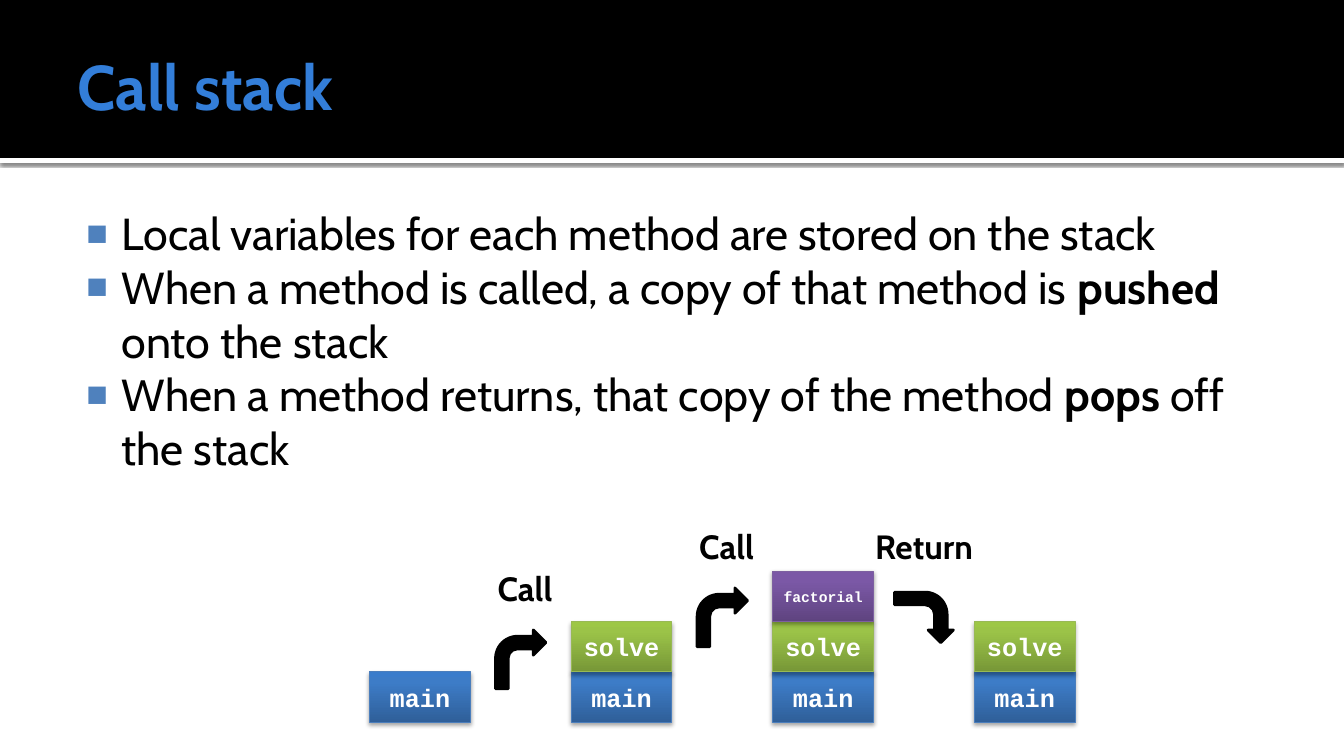
from dataclasses import dataclass

from lxml.etree import SubElement as Sub
from pptx import Presentation
from pptx.dml.color import RGBColor as Rgb
from pptx.enum.shapes import MSO_SHAPE as Shape
from pptx.enum.text import MSO_ANCHOR as Anchor, MSO_AUTO_SIZE as AutoSize, PP_ALIGN as Align
from pptx.oxml.ns import qn
from pptx.util import Inches, Pt


@dataclass(frozen=True)
class Theme:
    black: str = "000000"
    white: str = "FFFFFF"
    title: str = "337ED9"
    bullet: str = "4F81BD"
    text_font: str = "Cabin"
    code_font: str = "Courier New"
    title_size: float = 45
    body_size: float = 32
    label_size: float = 24
    code_size: float = 18
    small_code_size: float = 10.5


THEME = Theme()
UNIT = Inches(1 / 12)  # grid of 160 columns by 90 rows
COLUMNS, ROWS = 160, 90
HEADER_ROWS = 18.8
BLOCK_WIDTH, BLOCK_HEIGHT = 12, 6
ARROW_WIDTH, ARROW_HEIGHT = 6, 7
FIRST_STACK, STACK_STEP, STACK_FOOT = 44, 24, 86

# method: gradient from bottom to top, outline, type size
METHODS = {
    "main": (("2F5F99", "3D7CC7", "3A7CCB"), "4B7EBC", THEME.code_size),
    "solve": (("779737", "9BC348", "9DC746"), "98B955", THEME.code_size),
    "factorial": (("5F4480", "7B58A6", "7C57A8"), "7D60A0", THEME.small_code_size),
}
GRADIENT_STOPS = (0, 80, 100)

# methods on the stack, then label, label width, label offset, arrow row, rotation
STEPS = [
    (["main"], None),
    (["main", "solve"], ("Call", 13, -12, 75, 0)),
    (["main", "solve", "factorial"], ("Call", 13, -12, 70, 0)),
    (["main", "solve"], ("Return", 16, -14, 70, 90)),
]

BULLETS = [
    [("Local variables for each method are stored on the stack", False)],
    [("When a method is called, a copy of that method is ", False),
     ("pushed", True), (" onto the stack", False)],
    [("When a method returns, that copy of the method ", False),
     ("pops", True), (" off the stack", False)],
]


def write(paragraph, text, color, **formats):
    run = paragraph.add_run()
    run.text = text
    run.font.color.rgb = Rgb.from_string(color)
    for name, value in formats.items():
        setattr(run.font, name, value)


def cast_shadow(shape, opacity, blur, distance):
    """Give the shape a black shadow straight below it; lengths in points."""
    shape.shadow.inherit = False
    effects = shape.element.spPr.find(qn("a:effectLst"))
    shadow = Sub(effects, qn("a:outerShdw"), blurRad=str(Pt(blur)), dist=str(Pt(distance)),
                 dir="5400000", algn="ctr", rotWithShape="0")
    tint = Sub(shadow, qn("a:srgbClr"), val=THEME.black)
    Sub(tint, qn("a:alpha"), val=str(opacity * 1000))


deck = Presentation()
deck.slide_width, deck.slide_height = COLUMNS * UNIT, ROWS * UNIT
slide = deck.slides.add_slide(deck.slide_layouts[1])
title, body = slide.placeholders

# Header bands, behind the title
rule = slide.shapes.add_shape(Shape.RECTANGLE, 0, int(HEADER_ROWS * UNIT),
                              COLUMNS * UNIT, Inches(0.05))
header = slide.shapes.add_shape(Shape.RECTANGLE, 0, 0, COLUMNS * UNIT, int(HEADER_ROWS * UNIT))
for band, color in ((rule, THEME.white), (header, THEME.black)):
    band.fill.solid()
    band.fill.fore_color.rgb = Rgb.from_string(color)
    band.line.fill.background()
    band.shadow.inherit = False
    title.element.addprevious(band.element)
cast_shadow(rule, 60, 2.5, 0.8)

# Title and bullet list
for holder, top, height, anchor, margins in (
        (title, 2, 16.4, Anchor.MIDDLE, (0.1, 0.05, 0.05, 0.05)),
        (body, 23.3, 60.7, Anchor.TOP, (0.06, 0.1, 0.1, 0.05))):
    holder.left, holder.width = 8 * UNIT, (COLUMNS - 16) * UNIT
    holder.top, holder.height = int(top * UNIT), int(height * UNIT)
    frame = holder.text_frame
    frame.auto_size, frame.word_wrap, frame.vertical_anchor = AutoSize.NONE, True, anchor
    for side, margin in zip(("left", "top", "right", "bottom"), margins):
        setattr(frame, f"margin_{side}", Inches(margin))

heading = title.text_frame.paragraphs[0]
heading.alignment = Align.LEFT
write(heading, "Call stack", THEME.title, name=THEME.text_font,
      size=Pt(THEME.title_size), bold=True)

for number, pieces in enumerate(BULLETS):
    point = body.text_frame.add_paragraph() if number else body.text_frame.paragraphs[0]
    point.space_before = Pt(0)
    layout = point._p.get_or_add_pPr()
    layout.set("marL", str(Inches(0.48)))
    layout.set("indent", str(Inches(-0.35)))
    Sub(Sub(layout, qn("a:buClr")), qn("a:srgbClr"), val=THEME.bullet)
    Sub(layout, qn("a:buSzPct"), val="80000")
    Sub(layout, qn("a:buChar"), char="■")
    for text, bold in pieces:
        write(point, text, THEME.black, name=THEME.text_font,
              size=Pt(THEME.body_size), bold=bold)

# The stack after each call or return
for step, (methods, move) in enumerate(STEPS):
    column = FIRST_STACK + step * STACK_STEP
    shapes = slide.shapes.add_group_shape().shapes if move else slide.shapes
    for level, method in enumerate(methods, start=1):
        colors, outline, size = METHODS[method]
        block = shapes.add_shape(
            Shape.RECTANGLE, column * UNIT, (STACK_FOOT - level * BLOCK_HEIGHT) * UNIT,
            BLOCK_WIDTH * UNIT, BLOCK_HEIGHT * UNIT)
        block.fill.gradient()
        block.fill.gradient_angle = 90
        stops = block.element.spPr.find(qn("a:gradFill")).find(qn("a:gsLst"))
        for stop in list(stops):
            stops.remove(stop)
        for position, color in zip(GRADIENT_STOPS, colors):
            stop = Sub(stops, qn("a:gs"), pos=str(position * 1000))
            Sub(stop, qn("a:srgbClr"), val=color)
        block.line.color.rgb = Rgb.from_string(outline)
        block.line.width = Pt(0.75)
        cast_shadow(block, 35, 3.1, 1.8)
        block.text_frame.vertical_anchor = Anchor.MIDDLE
        caption = block.text_frame.paragraphs[0]
        caption.alignment = Align.CENTER
        write(caption, method, THEME.white, name=THEME.code_font, size=Pt(size), bold=True)
    if not move:
        continue

    action, label_width, label_offset, arrow_row, rotation = move
    arrow = shapes.add_shape(Shape.BENT_ARROW, (column - 9) * UNIT, arrow_row * UNIT,
                             ARROW_WIDTH * UNIT, ARROW_HEIGHT * UNIT)
    arrow.rotation = rotation
    arrow.fill.solid()
    arrow.fill.fore_color.rgb = arrow.line.color.rgb = Rgb.from_string(THEME.black)
    arrow.line.width = Pt(2)
    arrow.shadow.inherit = False

    label = shapes.add_textbox((column + label_offset) * UNIT, (arrow_row - 8) * UNIT,
                               label_width * UNIT, BLOCK_HEIGHT * UNIT).text_frame
    label.word_wrap, label.auto_size = True, AutoSize.SHAPE_TO_FIT_TEXT
    label.paragraphs[0].alignment = Align.CENTER
    write(label.paragraphs[0], action, THEME.black, name=THEME.text_font,
          size=Pt(THEME.label_size), bold=True)

deck.save("out.pptx")
